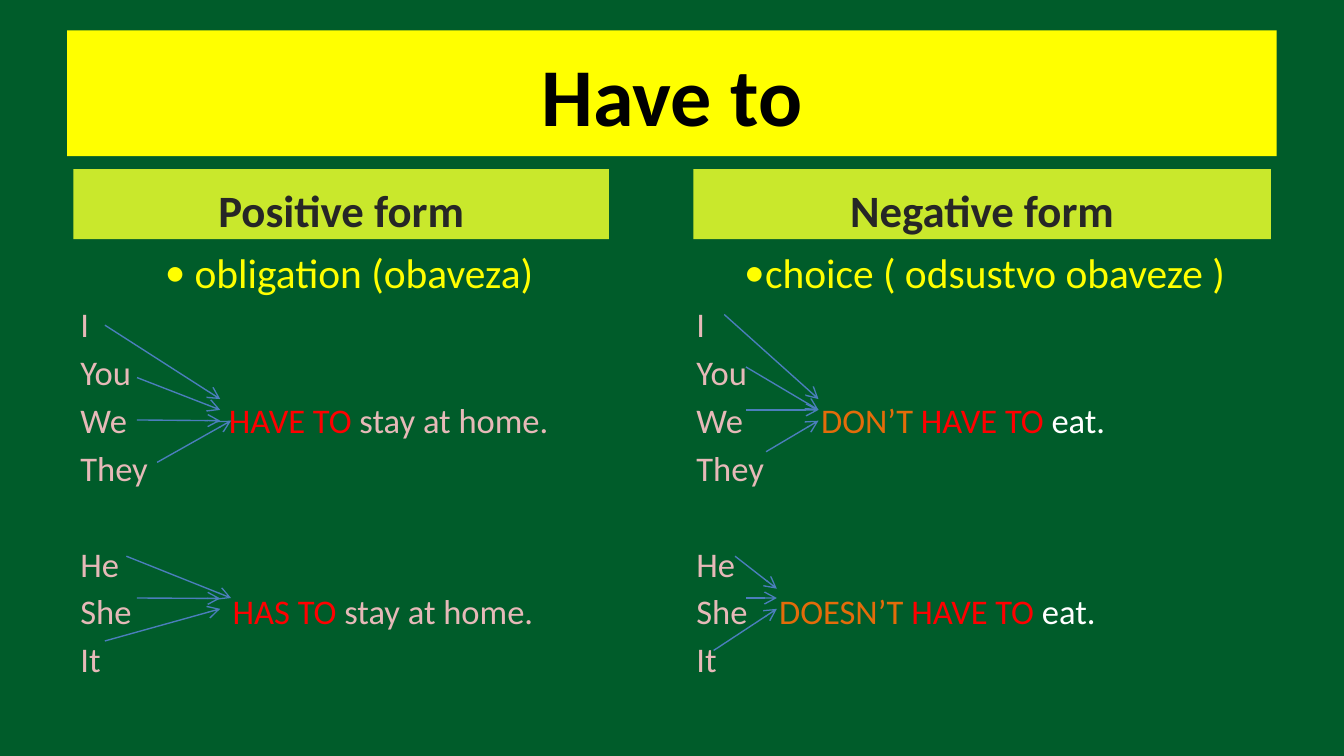
from lxml import etree
from pptx import Presentation
from pptx import util as u
from pptx.dml.color import RGBColor
from pptx.enum import shapes, text
from pptx.oxml.ns import qn

FONT = "Calibri"
YELLOW, LIME, PINK, RED = "FFFF00", "C9E82C", "E6B9B8", "FF0000"
ORANGE, WHITE, BLUE = "E46C0A", "FFFFFF", "4B7EBC"
LINE_GAP = 3.35
GROUP_GAP = 29.3


def rgb(value):
    return RGBColor.from_string(value)


def add_xml(parent, tag, **attributes):
    return etree.SubElement(parent, qn(tag), attributes)


def style(p, size, color, bold=False):
    p.font.name = FONT
    p.font.size = u.Pt(size)
    p.font.bold = bold
    p.font.color.rgb = rgb(color)


def add_banner(slide, box, words, fill, size, color, anchor):
    sp = slide.shapes.add_shape(shapes.MSO_SHAPE.RECTANGLE, *map(u.Pt, box))
    sp.shadow.inherit = False
    sp.fill.solid()
    sp.fill.fore_color.rgb = rgb(fill)
    sp.line.fill.background()
    tf = sp.text_frame
    tf.vertical_anchor = anchor
    if anchor == text.MSO_ANCHOR.BOTTOM:
        tf.margin_bottom = u.Pt(1.6)
    p = tf.paragraphs[0]
    p.text = words
    p.alignment = text.PP_ALIGN.CENTER
    style(p, size, color, bold=True)


def add_bullet(p, words, margin, hang):
    p.text = words
    pPr = p._p.get_or_add_pPr()
    pPr.set("marL", str(u.Pt(margin)))
    pPr.set("indent", str(-u.Pt(hang)))
    add_xml(pPr, "a:buFont", typeface=FONT)
    add_xml(pPr, "a:buChar", char="•")
    style(p, 22.2, YELLOW)


def add_pronoun(p, pronoun, phrase, gap):
    """Write a pronoun and, after a tab stop, its coloured verb phrase."""
    if phrase:
        tab, *parts = phrase
        tabs = add_xml(p._p.get_or_add_pPr(), "a:tabLst")
        add_xml(tabs, "a:tab", pos=str(u.Pt(tab)), algn="l")
        p.add_run().text = pronoun + "\t"
        for words, color in parts:
            r = p.add_run()
            r.text = words
            r.font.color.rgb = rgb(color)
    else:
        p.text = pronoun
    p.space_before = u.Pt(gap)
    style(p, 18.5, PINK)


def add_column(slide, left, bullet, phrases):
    sp = slide.shapes.add_textbox(*map(u.Pt, (left, 129, 318, 233)))
    tf = sp.text_frame
    tf.word_wrap = True
    add_bullet(tf.paragraphs[0], *bullet)
    for pronoun in ("I", "You", "We", "They", "He", "She", "It"):
        gap = GROUP_GAP if pronoun == "He" else LINE_GAP
        add_pronoun(tf.add_paragraph(), pronoun, phrases.get(pronoun), gap)


def add_arrow(slide, *ends):
    cx = slide.shapes.add_connector(
        shapes.MSO_CONNECTOR.STRAIGHT, *map(u.Pt, ends))
    cx.line.color.rgb = rgb(BLUE)
    cx.line.width = u.Pt(0.75)
    spPr = cx._element.spPr
    add_xml(spPr.find(qn("a:ln")), "a:tailEnd", type="arrow")
    add_xml(spPr, "a:effectLst")


def main():
    prs = Presentation()
    prs.slide_width, prs.slide_height = u.Pt(720), u.Pt(405)
    slide = prs.slides.add_slide(prs.slide_layouts[6])
    slide.background.fill.solid()
    slide.background.fill.fore_color.rgb = rgb("005C2A")

    add_banner(slide, (36, 16.2, 648, 67.5), "Have to", YELLOW, 44, "000000",
               text.MSO_ANCHOR.MIDDLE)
    for left, width, words in ((39.4, 286.8, "Positive form"),
                               (371.4, 309.4, "Negative form")):
        add_banner(slide, (left, 90.6, width, 37.6), words, LIME, 24,
                   "262626", text.MSO_ANCHOR.BOTTOM)

    home = (" stay at home.", PINK)
    add_column(slide, 36, ("obligation (obaveza)", 61.2, 16), {
        "We": (79.5, ("HAVE TO", RED), home),
        "She": (81.6, ("HAS TO", RED), home)})
    eat = (("HAVE TO ", RED), ("eat.", WHITE))
    add_column(slide, 366, ("choice ( odsustvo obaveze )", 36.8, 11.2), {
        "We": (66.8, ("DON’T ", ORANGE), *eat),
        "She": (44.3, ("DOESN’T ", ORANGE), *eat)})

    positive_arrows = (
        (56.2, 174.2, 118, 213.8), (73.4, 202.3, 118, 219.6),
        (73.4, 225, 118, 225.4), (84.2, 247.7, 123.8, 225.4),
        (67.7, 298, 123.8, 320.4), (73.4, 320.4, 118, 320.6),
        (56.2, 343.4, 118, 326.2))
    negative_arrows = (
        (388, 168.5, 438.5, 213.8), (399.6, 196.6, 438.5, 219.6),
        (399.6, 219.6, 438.5, 219.6), (410.4, 242, 438.5, 225.4),
        (393.8, 298, 416.2, 315.4), (399.6, 320.4, 416.2, 320.4),
        (382.3, 348.5, 416.2, 326.2))
    for ends in positive_arrows + negative_arrows:
        add_arrow(slide, *ends)

    prs.save("out.pptx")


if __name__ == "__main__":
    main()
